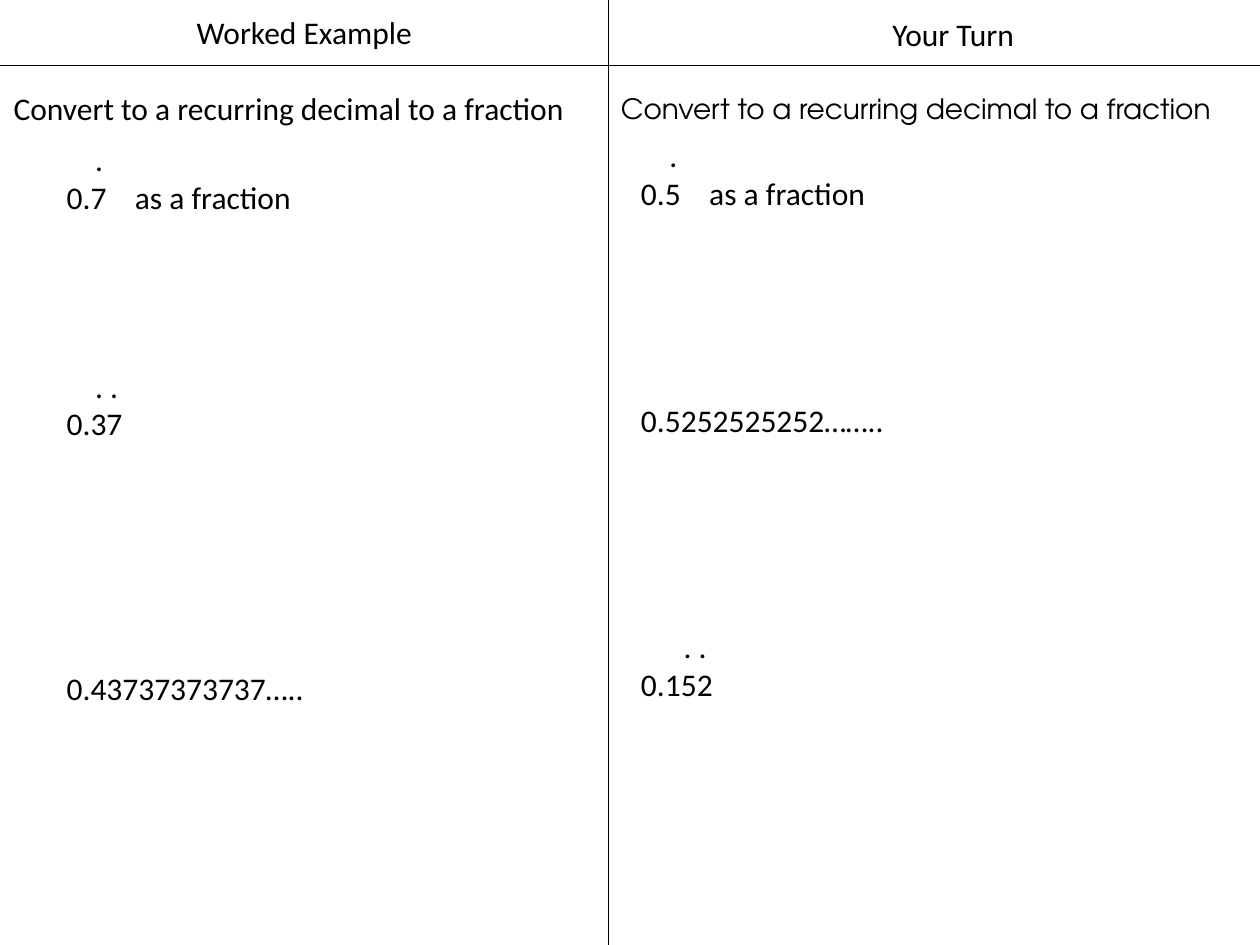
from lxml.etree import SubElement
from pptx import Presentation
from pptx.dml.color import RGBColor
from pptx.enum.shapes import MSO_CONNECTOR
from pptx.enum.text import PP_ALIGN
from pptx.oxml.ns import qn
from pptx.util import Pt

BLACK = RGBColor(0, 0, 0)
LINE = 21.6
SPACE = 4.07
TAB = 39

prs = Presentation()
prs.slide_width, prs.slide_height = Pt(720), Pt(540)
s = prs.slides.add_slide(prs.slide_layouts[6])


def add_text(box, wrap=True):
    tf = s.shapes.add_textbox(*[Pt(v) for v in box]).text_frame
    tf.word_wrap = wrap
    return tf


def write(p, text, size=18, name="Calibri"):
    r = p.add_run()
    r.text = text
    for key, value in {"size": Pt(size), "name": name}.items():
        setattr(r.font, key, value)
    r.font.color.rgb = BLACK


for ends in [(0, 37.5, 720, 37.5), (347.75, 0, 347.75, 540)]:
    rule = s.shapes.add_connector(MSO_CONNECTOR.STRAIGHT, *[Pt(v) for v in ends])
    rule.line.width = Pt(0.5)
    rule.line.color.rgb = BLACK
    SubElement(rule._element.spPr, qn("a:effectLst"))

for text, left, top in [("Worked Example", 57.6, 3.6), ("Your Turn", 428.4, 5)]:
    p = add_text((left, top, 232.6, 29)).paragraphs[0]
    p.alignment = PP_ALIGN.CENTER
    write(p, text)

for box, size, name in [
    ((0.7, 47.5, 377.3, 29), 18, "Calibri"),
    ((347.75, 49, 391.7, 26.6), 16, "TeX Gyre Adventor"),
]:
    p = add_text(box).paragraphs[0]
    write(p, "Convert to a recurring decimal to a fraction", size, name)

# Each row: text, lines of gap above, indent in spaces
worked = [
    (".", 0, 4),
    ("0.7\tas a fraction", 0, 0),
    (". .", 4, 4),
    ("0.37", 0, 0),
    ("0.43737373737…..", 6, 0),
]
your_turn = [
    (".", 0, 4),
    ("0.5\tas a fraction", 0, 0),
    ("0.5252525252……..", 5, 0),
    (". .", 5, 6),
    ("0.152", 0, 0),
]
for box, wrap, rows in [
    ((31, 76.3, 151.2, 399.6), False, worked),
    ((359.2, 74.2, 360, 334), True, your_turn),
]:
    tf = add_text(box, wrap)
    for i, (text, gap, indent) in enumerate(rows):
        p = tf.add_paragraph() if i else tf.paragraphs[0]
        p.space_before = Pt(gap * LINE)
        pPr = p._p.get_or_add_pPr()
        pPr.set("marL", str(Pt(indent * SPACE)))
        if "\t" in text:
            tabs = SubElement(pPr, qn("a:tabLst"))
            SubElement(tabs, qn("a:tab"), pos=str(Pt(TAB)), algn="l")
        write(p, text)

prs.save("out.pptx")
